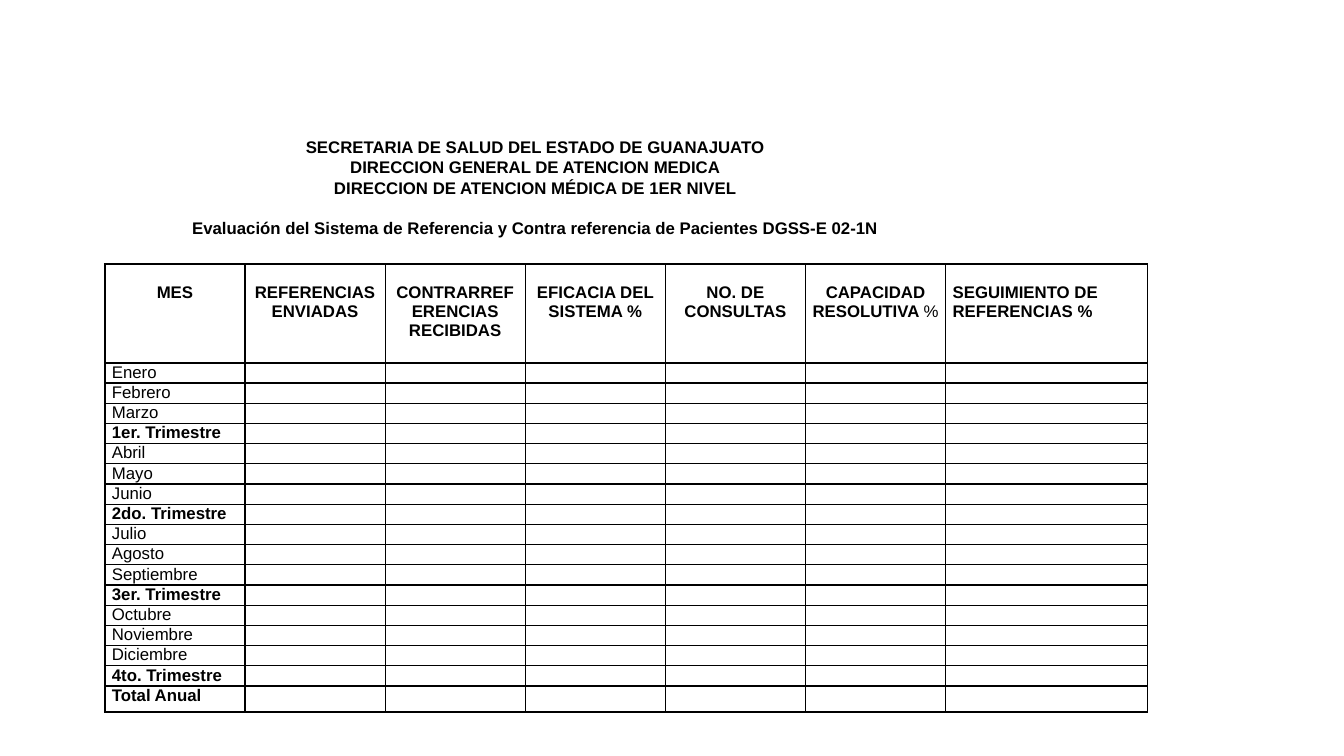
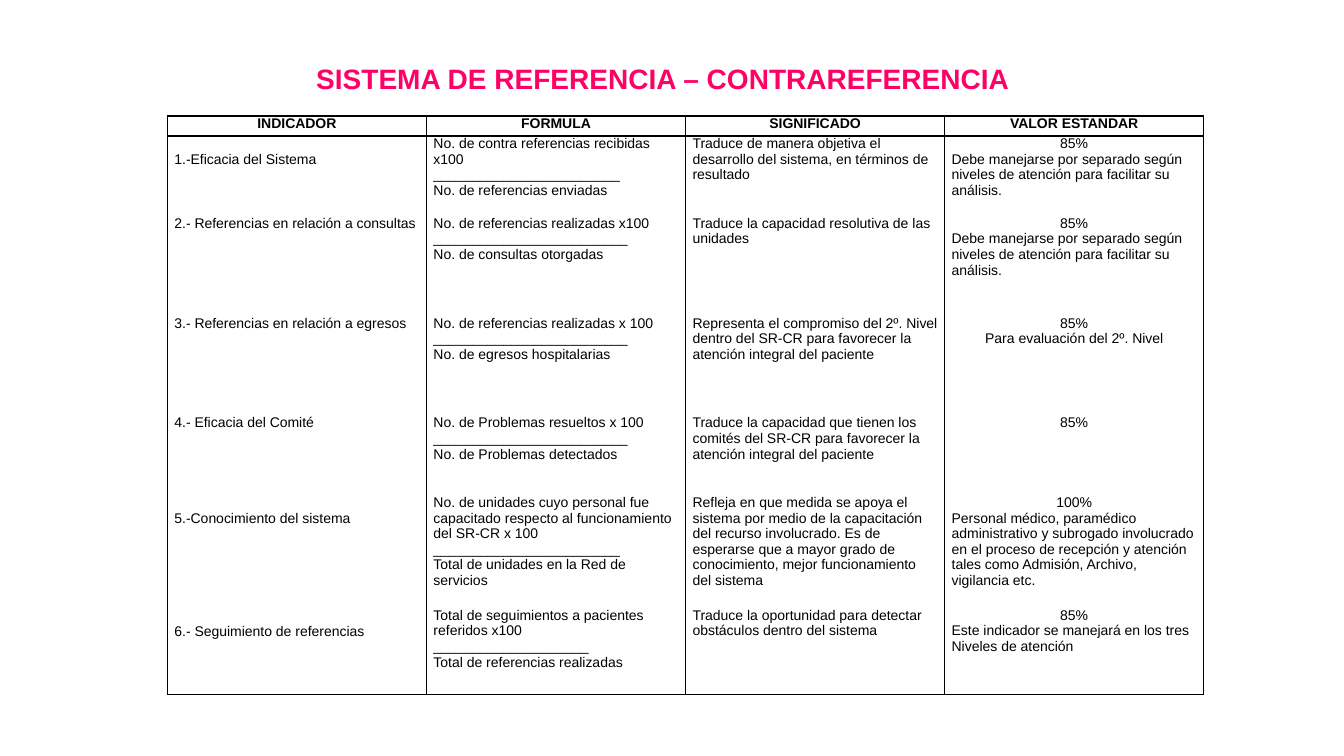
from dataclasses import dataclass

from lxml.etree import SubElement
from pptx import Presentation
from pptx.dml.color import RGBColor
from pptx.enum.text import MSO_ANCHOR, PP_ALIGN
from pptx.oxml.ns import qn
from pptx.util import Inches, Pt


@dataclass(frozen=True)
class Theme:
    font: str = "Arial"
    ink: str = "000000"
    accent: str = "FF0066"
    title_size: float = 20
    form_size: float = 12
    indicator_size: float = 10
    heading_pitch: float = 14.4
    thin: float = 1
    thick: float = 1.5
    cell_margin: float = 0.07


THEME = Theme()
CENTER, LEFT = PP_ALIGN.CENTER, PP_ALIGN.LEFT

FORM_HEADING = [
    "SECRETARIA DE SALUD DEL ESTADO DE GUANAJUATO",
    "DIRECCION GENERAL DE ATENCION MEDICA",
    "DIRECCION DE ATENCION MÉDICA DE 1ER NIVEL",
    "Evaluación del Sistema de Referencia y Contra referencia de Pacientes DGSS-E 02-1N",
]
FORM_COLUMNS = [
    "MES",
    "REFERENCIAS ENVIADAS",
    "CONTRARREFERENCIAS RECIBIDAS",
    "EFICACIA DEL SISTEMA %",
    "NO. DE CONSULTAS",
    "CAPACIDAD RESOLUTIVA ",
    "SEGUIMIENTO DE REFERENCIAS %",
]
QUARTERS = [
    ("Enero", "Febrero", "Marzo", "1er. Trimestre"),
    ("Abril", "Mayo", "Junio", "2do. Trimestre"),
    ("Julio", "Agosto", "Septiembre", "3er. Trimestre"),
    ("Octubre", "Noviembre", "Diciembre", "4to. Trimestre"),
]
INDICATOR_COLUMNS = ["INDICADOR", "FORMULA", "SIGNIFICADO", "VALOR ESTANDAR"]
BY_LEVEL = "Debe manejarse por separado según niveles de atención para facilitar su análisis."


@dataclass(frozen=True)
class Indicator:
    name: str
    numerator: str
    rule_length: int
    denominator: str
    meaning: str
    standard: str
    note: str = ""
    note_align: PP_ALIGN = LEFT
    name_on_second_line: bool = False


INDICATORS = [
    Indicator("1.-Eficacia del Sistema",
              "No. de contra referencias recibidas x100", 24, "No. de referencias enviadas",
              "Traduce de manera objetiva el desarrollo del sistema, en términos de resultado",
              "85%", BY_LEVEL, name_on_second_line=True),
    Indicator("2.- Referencias en relación a consultas",
              "No. de referencias realizadas x100", 25, "No. de consultas otorgadas",
              "Traduce la capacidad resolutiva de las unidades",
              "85%", BY_LEVEL),
    Indicator("3.- Referencias en relación a egresos",
              "No. de referencias realizadas x 100", 25, "No. de egresos hospitalarias",
              "Representa el compromiso del 2º. Nivel dentro del SR-CR para favorecer "
              "la atención integral del paciente",
              "85%", "Para evaluación del 2º. Nivel", CENTER),
    Indicator("4.- Eficacia del Comité",
              "No. de Problemas resueltos x 100", 25, "No. de Problemas detectados",
              "Traduce la capacidad que tienen los comités del SR-CR para favorecer "
              "la atención integral del paciente",
              "85%"),
    Indicator("5.-Conocimiento del sistema",
              "No. de unidades cuyo personal fue capacitado respecto al funcionamiento "
              "del SR-CR x 100", 24, "Total de unidades en la Red de servicios",
              "Refleja en que medida se apoya el sistema por medio de la capacitación "
              "del recurso involucrado. Es de esperarse que a mayor grado de conocimiento, "
              "mejor funcionamiento del sistema",
              "100%",
              "Personal médico, paramédico administrativo y subrogado involucrado en el "
              "proceso de recepción y atención tales como Admisión, Archivo, vigilancia etc.",
              name_on_second_line=True),
    Indicator("6.- Seguimiento de referencias",
              "Total de seguimientos a pacientes referidos x100", 20,
              "Total de referencias realizadas",
              "Traduce la oportunidad para detectar obstáculos dentro del sistema",
              "85%", "Este indicador se manejará en los tres Niveles de atención",
              name_on_second_line=True),
]


def add_run(paragraph, text, size, bold=False, color=THEME.ink):
    run = paragraph.add_run()
    run.text = text
    run.font.name = THEME.font
    run.font.size = Pt(size)
    run.font.bold = bold
    run.font.color.rgb = RGBColor.from_string(color)


def write_lines(frame, lines, size, bold=False, color=THEME.ink):
    """Write (text, alignment) pairs, one paragraph each, and return the paragraphs."""
    for index, (text, align) in enumerate(lines):
        paragraph = frame.add_paragraph() if index else frame.paragraphs[0]
        paragraph.alignment = align
        add_run(paragraph, text, size, bold, color)
    return frame.paragraphs


def add_heading(slide, left, top, width, height, lines, size, color=THEME.ink):
    box = slide.shapes.add_textbox(Inches(left), Inches(top), Inches(width), Inches(height))
    frame = box.text_frame
    frame.word_wrap = True
    frame.vertical_anchor = MSO_ANCHOR.TOP
    return write_lines(frame, [(line, CENTER) for line in lines], size, True, color)


def set_borders(cell, left, right, top, bottom):
    """Set border widths in points; zero hides a border."""
    properties = cell._tc.get_or_add_tcPr()
    for tag, width in zip(("a:lnL", "a:lnR", "a:lnT", "a:lnB"), (left, right, top, bottom)):
        line = SubElement(properties, qn(tag), w=str(int(Pt(width))))
        if width:
            fill = SubElement(line, qn("a:solidFill"))
            SubElement(fill, qn("a:srgbClr"), val=THEME.ink)
        else:
            SubElement(line, qn("a:noFill"))


def add_grid(slide, left, top, widths, heights, outer, inner_rule):
    """Add an unfilled table whose rows below the header are split by inner_rule."""
    frame = slide.shapes.add_table(len(heights), len(widths), Inches(left), Inches(top),
                                   Inches(sum(widths)), Inches(sum(heights)))
    table = frame.table
    table.first_row = table.horz_banding = False
    for column, width in zip(table.columns, widths):
        column.width = Inches(width)
    last = len(heights) - 1
    for index, (row, height) in enumerate(zip(table.rows, heights)):
        row.height = Inches(height)
        for column, cell in enumerate(row.cells):
            set_borders(cell,
                        left=THEME.thin if column else outer,
                        right=THEME.thin,
                        top=outer if index < 2 else inner_rule,
                        bottom=outer if index in (0, last) else inner_rule)
            cell.fill.background()
            cell.margin_left = cell.margin_right = Inches(THEME.cell_margin)
            cell.margin_top = cell.margin_bottom = 0
    return table


def set_blank_size(cell, size):
    """Keep an empty cell from growing its row."""
    SubElement(cell.text_frame.paragraphs[0]._p, qn("a:endParaRPr"), sz=str(size * 100))


def build_form_slide(slide):
    size = THEME.form_size
    paragraphs = add_heading(slide, 1.61, 1.31, 7.4, 1.31, FORM_HEADING, size)
    for paragraph in paragraphs:
        paragraph.line_spacing = Pt(THEME.heading_pitch)
    paragraphs[-1].space_before = Pt(THEME.heading_pitch)

    periods = [(name, name == quarter[-1]) for quarter in QUARTERS for name in quarter]
    periods.append(("Total Anual", True))
    heights = [0.98] + [0.2] * (len(periods) - 1) + [0.26]
    table = add_grid(slide, 1.04, 2.62, [1.39] * 6 + [2], heights, THEME.thick, THEME.thin)

    last = len(FORM_COLUMNS) - 1
    for column, label in enumerate(FORM_COLUMNS):
        cell = table.cell(0, column)
        cell.margin_top = Inches(0.19)
        align = LEFT if column == last else CENTER
        paragraphs = write_lines(cell.text_frame, [(label, align)], size, True)
        if label.startswith("CAPACIDAD"):
            add_run(paragraphs[0], "%", size)
    for row, (name, bold) in enumerate(periods, start=1):
        write_lines(table.cell(row, 0).text_frame, [(name, LEFT)], size, bold)
        for column in range(1, len(FORM_COLUMNS)):
            set_blank_size(table.cell(row, column), size)


def build_indicator_slide(slide):
    size = THEME.indicator_size
    heights = [0.2, 0.79, 0.99, 0.99, 0.79, 1.12, 0.86]
    table = add_grid(slide, 1.66, 1.15, [2.57] * 4, heights, THEME.thin, 0)
    for column, label in enumerate(INDICATOR_COLUMNS):
        write_lines(table.cell(0, column).text_frame, [(label, CENTER)], size, True)
    for row, item in enumerate(INDICATORS, start=1):
        standard = [(item.standard, CENTER)]
        if item.note:
            standard.append((item.note, item.note_align))
        formula = (item.numerator, "_" * item.rule_length, item.denominator)
        contents = [[(item.name, LEFT)], [(line, LEFT) for line in formula],
                    [(item.meaning, LEFT)], standard]
        for column, lines in enumerate(contents):
            write_lines(table.cell(row, column).text_frame, lines, size)
        if item.name_on_second_line:
            table.cell(row, 0).margin_top = Inches(0.16)
    add_heading(slide, 2.36, 0.56, 8.43, 0.77, ["SISTEMA DE REFERENCIA – CONTRAREFERENCIA"],
                THEME.title_size, THEME.accent)


def main():
    presentation = Presentation()
    presentation.slide_width = Inches(13.33)
    presentation.slide_height = Inches(7.5)
    for build in (build_form_slide, build_indicator_slide):
        build(presentation.slides.add_slide(presentation.slide_layouts[6]))
    presentation.save("out.pptx")


if __name__ == "__main__":
    main()
